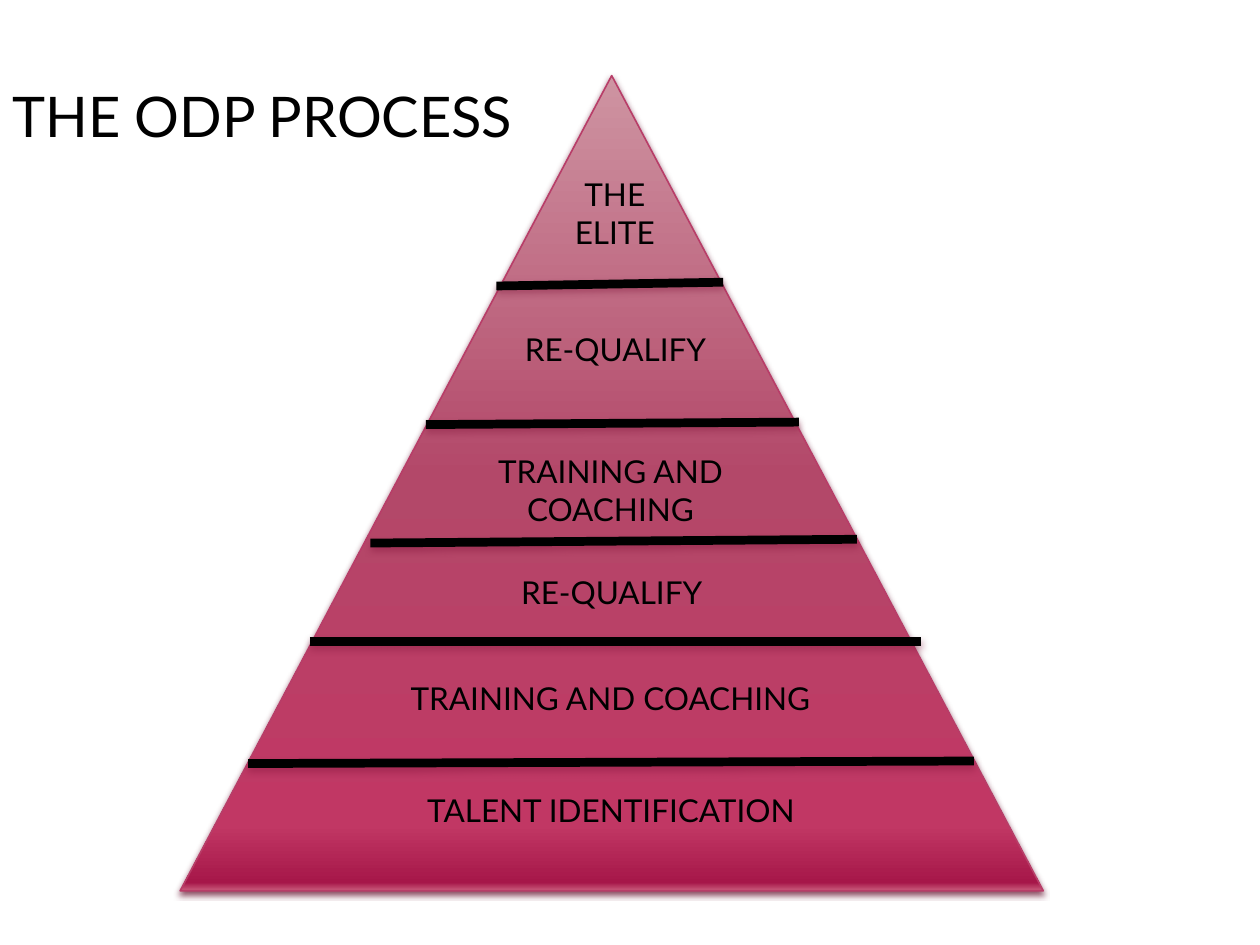
from lxml.etree import SubElement
from pptx import Presentation
from pptx.dml.color import RGBColor
from pptx.enum.shapes import MSO_CONNECTOR, MSO_SHAPE
from pptx.enum.text import MSO_AUTO_SIZE, PP_ALIGN
from pptx.oxml.ns import qn
from pptx.util import Inches, Pt

PYRAMID = (1.43, 0.6, 6.85, 6.47)
GRADIENT = [(0, "CE94A2"), (49, "B34869"), (92, "C13764"), (99, "A61749"), (100, "CA5D7C")]
PYRAMID_SHADOW = {"color": "722640", "opacity": 83, "blur": 3.1, "distance": 2}
DIVIDER_SHADOW = {"color": "7F1238", "opacity": 38, "blur": 4, "distance": 2}
DIVIDERS = [
    (3.94, 2.27, 5.74, 2.24),
    (3.38, 3.37, 6.34, 3.35),
    (2.94, 4.31, 6.8, 4.28),
    (2.46, 5.09, 7.31, 5.09),
    (1.97, 6.06, 7.73, 6.04),
]
TITLE = ("THE ODP PROCESS", (0, 0.6, 5.34, 0.64))
LEVELS = [
    ("THE ELITE", (4.25, 1.34, 1.26, 0.71)),
    ("RE-QUALIFY", (3.12, 2.57, 3.53, 0.4)),
    ("TRAINING AND COACHING", (3.65, 3.54, 2.39, 0.71)),
    ("RE-QUALIFY", (3.09, 4.5, 3.53, 0.4)),
    ("TRAINING AND COACHING", (2.59, 5.34, 4.51, 0.4)),
    ("TALENT IDENTIFICATION", (1.97, 6.23, 5.76, 0.4)),
]


def rgb(value):
    return RGBColor.from_string(value)


def add_color(parent, value):
    return SubElement(parent, qn("a:srgbClr"), val=value)


def add_shadow(effects, color, opacity, blur, distance):
    shadow = SubElement(effects, qn("a:outerShdw"), blurRad=str(Pt(blur)),
                        dist=str(Pt(distance)), dir="5400000", rotWithShape="0")
    SubElement(add_color(shadow, color), qn("a:alpha"), val=str(opacity * 1000))


def set_line(line, color, width):
    line.color.rgb = rgb(color)
    line.width = Pt(width)


def add_pyramid(page):
    pyramid = page.shapes.add_shape(MSO_SHAPE.ISOSCELES_TRIANGLE, *map(Inches, PYRAMID))
    pyramid.fill.gradient()
    pyramid.fill.gradient_angle = 270
    properties = pyramid.element.spPr
    stops = properties.find(qn("a:gradFill")).find(qn("a:gsLst"))
    for stop in list(stops):
        stops.remove(stop)
    for position, color in GRADIENT:
        add_color(SubElement(stops, qn("a:gs"), pos=str(position * 1000)), color)
    set_line(pyramid.line, "B83D68", 0.9)
    pyramid.shadow.inherit = False
    add_shadow(properties.find(qn("a:effectLst")), **PYRAMID_SHADOW)


def add_divider(page, ends):
    divider = page.shapes.add_connector(MSO_CONNECTOR.STRAIGHT, *map(Inches, ends))
    set_line(divider.line, "000000", 5)
    effects = SubElement(divider.element.spPr, qn("a:effectLst"))
    add_shadow(effects, **DIVIDER_SHADOW)


def add_label(page, text, place, size, alignment):
    box = page.shapes.add_textbox(*map(Inches, place))
    frame = box.text_frame
    frame.word_wrap = True
    frame.auto_size = MSO_AUTO_SIZE.SHAPE_TO_FIT_TEXT
    para = frame.paragraphs[0]
    para.alignment = alignment
    span = para.add_run()
    span.text = text
    for name, value in {"name": "Lato", "size": Pt(size)}.items():
        setattr(span.font, name, value)
    span.font.color.rgb = rgb("000000")


def main():
    deck = Presentation()
    deck.slide_width, deck.slide_height = Inches(10), Inches(7.5)
    page = deck.slides.add_slide(deck.slide_layouts[6])
    add_pyramid(page)
    for ends in DIVIDERS:
        add_divider(page, ends)
    add_label(page, *TITLE, 32, PP_ALIGN.LEFT)
    for text, place in LEVELS:
        add_label(page, text, place, 18, PP_ALIGN.CENTER)
    deck.save("out.pptx")


if __name__ == "__main__":
    main()
